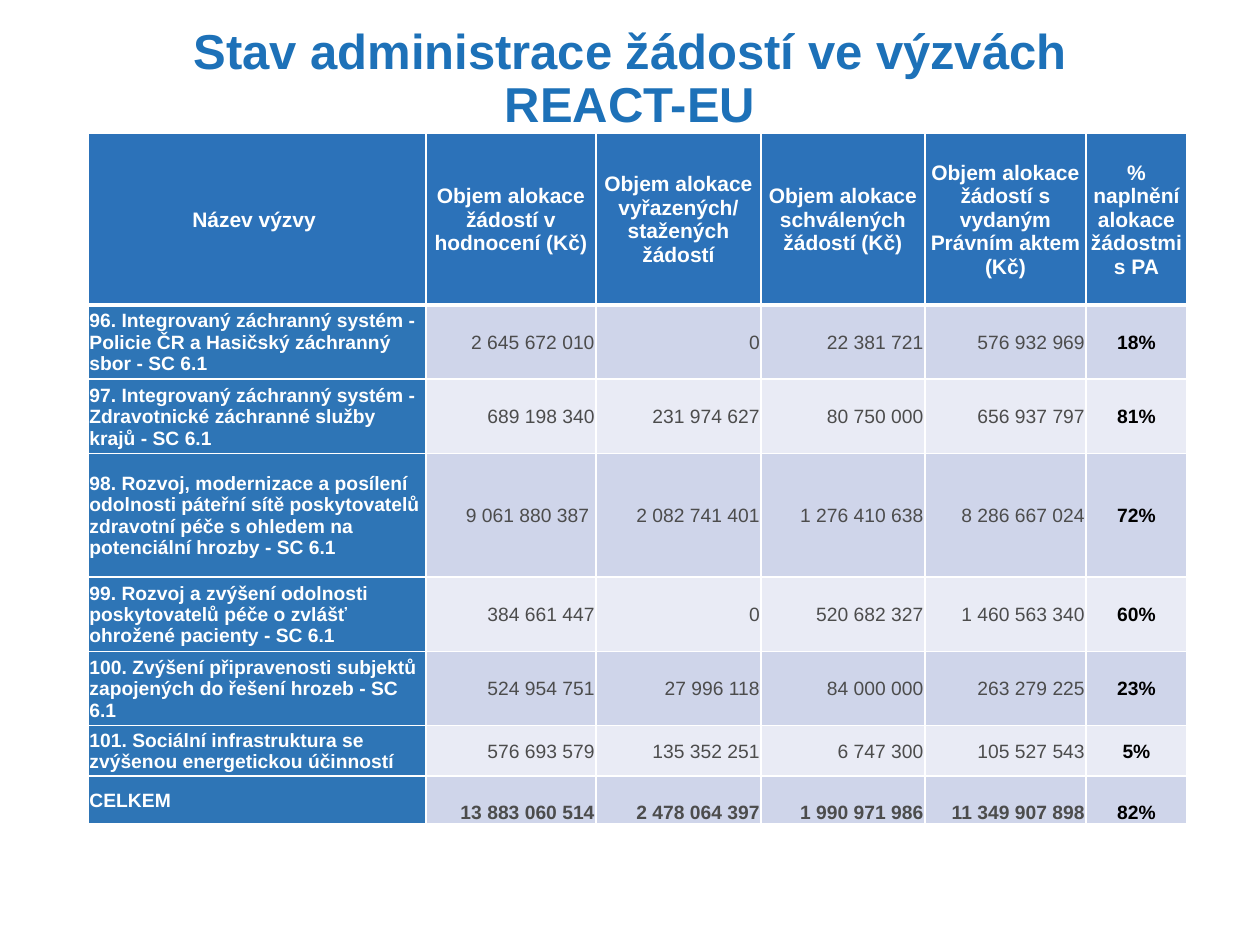
import pptx
import pptx.dml.color
import pptx.enum.text
import pptx.oxml
import pptx.oxml.ns
import pptx.util

Inches, Pt = pptx.util.Inches, pptx.util.Pt
RGBColor = pptx.dml.color.RGBColor
Align = pptx.enum.text.PP_ALIGN
Anchor = pptx.enum.text.MSO_ANCHOR

TITLE = "Stav administrace žádostí ve výzvách REACT-EU"
HEADERS = [
    "Název výzvy ",
    "Objem alokace žádostí v hodnocení (Kč)",
    "Objem alokace vyřazených/ stažených žádostí",
    "Objem alokace schválených žádostí (Kč)",
    "Objem alokace žádostí s vydaným Právním aktem (Kč)",
    "% naplnění alokace žádostmi s PA",
]
CALLS = [
    ("96. Integrovaný záchranný systém - Policie ČR a Hasičský záchranný sbor - SC 6.1",
     "2 645 672 010", "0", "22 381 721", "576 932 969", "18%"),
    ("97. Integrovaný záchranný systém - Zdravotnické záchranné služby krajů - SC 6.1",
     "689 198 340", "231 974 627", "80 750 000", "656 937 797", "81%"),
    ("98. Rozvoj, modernizace a posílení odolnosti páteřní sítě poskytovatelů "
     "zdravotní péče s ohledem na potenciální hrozby - SC 6.1",
     "9 061 880 387 ", "2 082 741 401", "1 276 410 638", "8 286 667 024", "72%"),
    ("99. Rozvoj a zvýšení odolnosti poskytovatelů péče o zvlášť ohrožené pacienty - SC 6.1",
     "384 661 447", "0", "520 682 327", "1 460 563 340", "60%"),
    ("100. Zvýšení připravenosti subjektů zapojených do řešení hrozeb - SC 6.1",
     "524 954 751", "27 996 118", "84 000 000", "263 279 225", "23%"),
    ("101. Sociální infrastruktura se zvýšenou energetickou účinností",
     "576 693 579", "135 352 251", "6 747 300", "105 527 543", "5%"),
]
TOTAL = ("CELKEM", "13 883 060 514", "2 478 064 397", "1 990 971 986", "11 349 907 898", "82%")

COLUMN_WIDTHS = [2.68, 1.35, 1.31, 1.3, 1.28, 0.8]
ROW_HEIGHTS = [1.36, 0.59, 0.59, 0.98, 0.59, 0.59, 0.4, 0.38]

TITLE_BLUE = RGBColor(0x1D, 0x71, 0xB8)
HEADER_BLUE = RGBColor(0x2C, 0x72, 0xB9)
NAME_BLUE = RGBColor(0x2E, 0x75, 0xB6)
BANDS = [RGBColor(0xCF, 0xD5, 0xEA), RGBColor(0xE9, 0xEB, 0xF5)]
WHITE = RGBColor(0xFF, 0xFF, 0xFF)
GREY = RGBColor(0x4C, 0x4C, 0x4C)
BLACK = RGBColor(0, 0, 0)


def write_text(paragraph, text, size, color, bold, alignment):
    paragraph.alignment = alignment
    run = paragraph.add_run()
    run.text = text
    for name, value in {"name": "Arial", "size": Pt(size), "bold": bold}.items():
        setattr(run.font, name, value)
    run.font.color.rgb = color


def add_borders(cell, widths):
    """Draw white borders; widths maps side letters L, R, T, B to points."""
    properties = cell._tc.get_or_add_tcPr()
    for side, width in widths.items():
        properties.append(pptx.oxml.parse_xml(
            f'<a:ln{side} {pptx.oxml.ns.nsdecls("a")} w="{Pt(width)}">'
            f'<a:solidFill><a:srgbClr val="{WHITE}"/></a:solidFill></a:ln{side}>'))


def cell_style(row, column):
    """Return fill, text size, text colour, bold, alignment and anchor."""
    if row == 0:
        return HEADER_BLUE, 12, WHITE, True, Align.CENTER, Anchor.MIDDLE
    if column == 0:
        return NAME_BLUE, 11, WHITE, True, Align.LEFT, Anchor.MIDDLE
    band = BANDS[(row - 1) % 2]
    is_total = row == len(ROW_HEIGHTS) - 1
    anchor = Anchor.BOTTOM if is_total else Anchor.MIDDLE
    if column == len(COLUMN_WIDTHS) - 1:
        return band, 11, BLACK, True, Align.CENTER, anchor
    return band, 11, GREY, is_total, Align.RIGHT, anchor


def add_title(slide):
    box = slide.shapes.add_textbox(Inches(0.7), Inches(0.01), Inches(8.6), Inches(1.25))
    frame = box.text_frame
    frame.word_wrap = True
    frame.vertical_anchor = Anchor.MIDDLE
    paragraph = frame.paragraphs[0]
    paragraph.line_spacing = 0.9
    write_text(paragraph, TITLE, 28, TITLE_BLUE, True, Align.CENTER)


def add_calls_table(slide):
    rows = [HEADERS, *CALLS, TOTAL]
    table = slide.shapes.add_table(
        len(rows), len(HEADERS), Inches(0.7), Inches(1.06),
        Inches(sum(COLUMN_WIDTHS)), Inches(sum(ROW_HEIGHTS))).table
    table.horz_banding = False
    for column, width in zip(table.columns, COLUMN_WIDTHS):
        column.width = Inches(width)
    for row, height in zip(table.rows, ROW_HEIGHTS):
        row.height = Inches(height)
    for row, texts in enumerate(rows):
        borders = {"L": 1, "R": 1, "T": 3 if row == 1 else 1, "B": 3 if row == 0 else 1}
        for column, text in enumerate(texts):
            cell = table.cell(row, column)
            fill, size, color, bold, alignment, anchor = cell_style(row, column)
            for side in ("left", "right", "top"):
                setattr(cell, f"margin_{side}", Inches(0.01))
            cell.margin_bottom = 0
            cell.vertical_anchor = anchor
            add_borders(cell, borders)
            cell.fill.solid()
            cell.fill.fore_color.rgb = fill
            write_text(cell.text_frame.paragraphs[0], text, size, color, bold, alignment)


def main():
    presentation = pptx.Presentation()
    presentation.slide_width = Inches(10)
    presentation.slide_height = Inches(7.5)
    slide = presentation.slides.add_slide(presentation.slide_layouts[6])
    add_title(slide)
    add_calls_table(slide)
    presentation.save("out.pptx")


if __name__ == "__main__":
    main()
